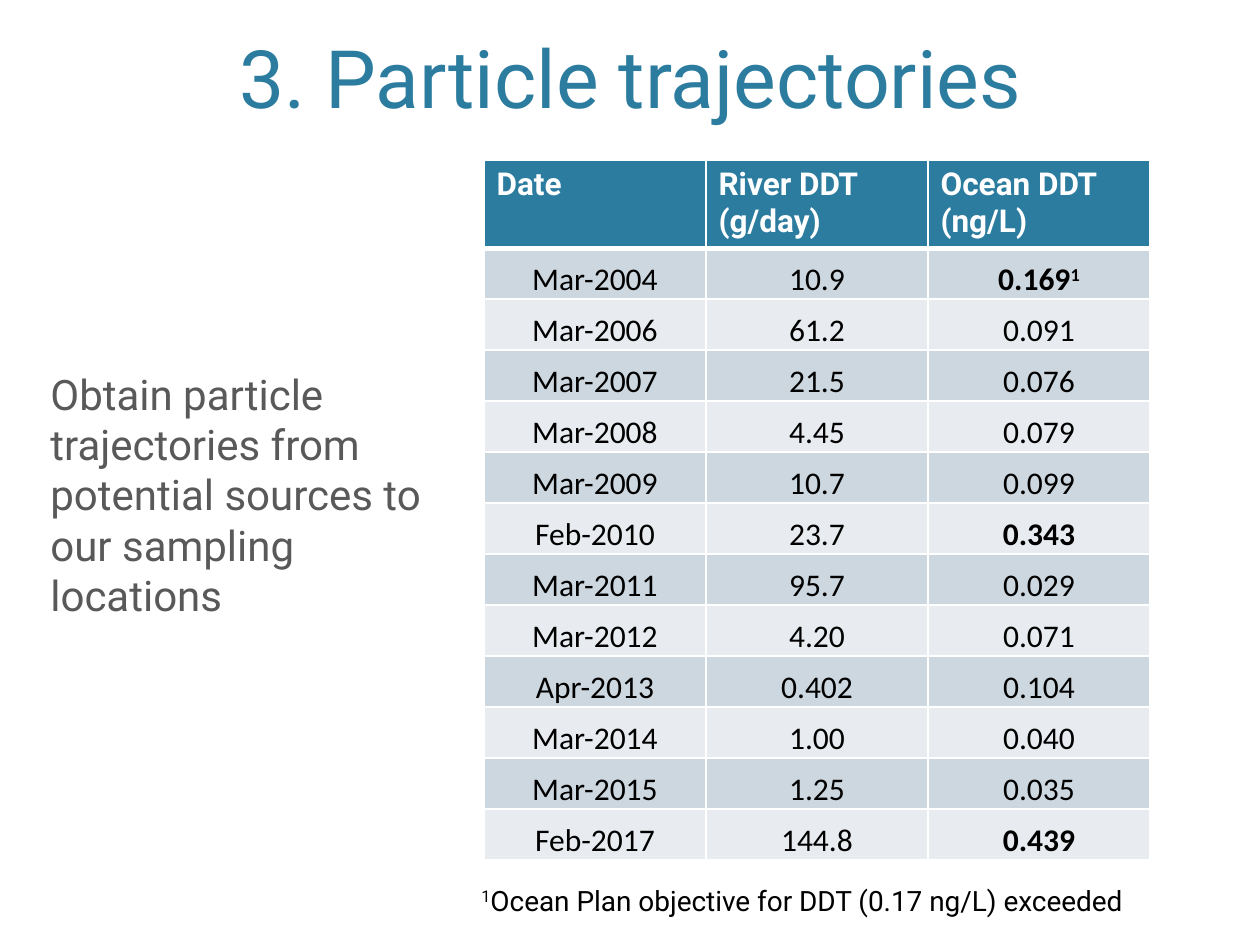
from lxml import etree
from pptx import Presentation
from pptx.dml.color import RGBColor
from pptx.enum.text import MSO_ANCHOR, PP_ALIGN
from pptx.oxml.ns import qn
from pptx.util import Emu, Pt

TOP, BOTTOM = MSO_ANCHOR.TOP, MSO_ANCHOR.BOTTOM
LEFT, CENTER = PP_ALIGN.LEFT, PP_ALIGN.CENTER
PX_PER_INCH = 126
COLORS = {"teal": "2C7C9F", "gray": "595959", "black": "000000",
          "white": "FFFFFF", "band": "CDD7DF", "light": "E8ECF0"}
HEADERS = ["Date", "River DDT (g/day)", "Ocean DDT (ng/L)"]
READINGS = [
    ("Mar-2004", "10.9", "0.169"), ("Mar-2006", "61.2", "0.091"),
    ("Mar-2007", "21.5", "0.076"), ("Mar-2008", "4.45", "0.079"),
    ("Mar-2009", "10.7", "0.099"), ("Feb-2010", "23.7", "0.343"),
    ("Mar-2011", "95.7", "0.029"), ("Mar-2012", "4.20", "0.071"),
    ("Apr-2013", "0.402", "0.104"), ("Mar-2014", "1.00", "0.040"),
    ("Mar-2015", "1.25", "0.035"), ("Feb-2017", "144.8", "0.439"),
]
HIGHLIGHTS = {"0.169", "0.343", "0.439"}
FOOTNOTES = {"0.169": "1"}


def px(n):
    return Emu(round(n * 914400 / PX_PER_INCH))


def rgb(name):
    return RGBColor.from_string(COLORS[name])


class SlideBuilder:
    def __init__(self, prs):
        self.font = "Roboto"
        self.s = prs.slides.add_slide(prs.slide_layouts[6])

    def add_runs(self, tf, runs, size, color, align=LEFT, font=None, bold=False):
        p = tf.paragraphs[0]
        p.alignment = align
        formats = {"size": Pt(size), "name": font or self.font, "bold": bold}
        for text, raised in runs:
            r = p.add_run()
            r.text = text
            for key, value in formats.items():
                setattr(r.font, key, value)
            r.font.color.rgb = rgb(color)
            if raised:
                r._r.get_or_add_rPr().set("baseline", "30000")
        return p

    def text(self, box, runs, size, color, align=LEFT, anchor=TOP, wrap=True):
        sp = self.s.shapes.add_textbox(*map(px, box))
        tf = sp.text_frame
        tf.word_wrap = wrap
        tf.vertical_anchor = anchor
        self.add_runs(tf, runs, size, color, align)

    def borders(self, cell, bottom):
        tcPr = cell._tc.get_or_add_tcPr()
        widths = {"a:lnL": 1, "a:lnR": 1, "a:lnT": 1, "a:lnB": bottom}
        for i, (tag, width) in enumerate(widths.items()):
            ln = etree.Element(qn(tag), w=str(int(Pt(width))))
            fill = etree.SubElement(ln, qn("a:solidFill"))
            etree.SubElement(fill, qn("a:srgbClr"), val=COLORS["white"])
            tcPr.insert(i, ln)

    def fill(self, cell, color, bottom=1):
        cell.fill.solid()
        cell.fill.fore_color.rgb = rgb(color)
        self.borders(cell, bottom)

    def header_cell(self, cell, text):
        self.fill(cell, "teal", 3)
        self.add_runs(cell.text_frame, [(text, False)], 18, "white", bold=True)

    def body_cell(self, cell, text, color):
        self.fill(cell, color)
        formats = {"vertical_anchor": BOTTOM, "margin_left": px(9),
                   "margin_right": px(9), "margin_top": 0, "margin_bottom": 0}
        for key, value in formats.items():
            setattr(cell, key, value)
        runs = [(text, False)]
        if text in FOOTNOTES:
            runs.append((FOOTNOTES[text], True))
        p = self.add_runs(cell.text_frame, runs, 18, "black", CENTER, "Calibri",
                          text in HIGHLIGHTS)
        p.space_after = Pt(2)

    def table(self, left, top, col_width, header_height, row_height):
        cols, rows = len(HEADERS), len(READINGS) + 1
        height = header_height + row_height * len(READINGS)
        table = self.s.shapes.add_table(
            rows, cols, *map(px, (left, top, cols * col_width, height))).table
        for col in table.columns:
            col.width = px(col_width)
        for i, row in enumerate(table.rows):
            row.height = px(row_height if i else header_height)
        for j, text in enumerate(HEADERS):
            self.header_cell(table.cell(0, j), text)
        for i, reading in enumerate(READINGS, 1):
            for j, text in enumerate(reading):
                self.body_cell(table.cell(i, j), text, "band" if i % 2 else "light")


def main():
    prs = Presentation()
    prs.slide_width, prs.slide_height = px(1260), px(945)
    slide = SlideBuilder(prs)
    slide.text((76, 19, 1108, 112), [("3. Particle trajectories", False)],
               46, "teal", CENTER, BOTTOM)
    slide.table(484, 160, 222, 86, 51)
    slide.text((469, 877, 726, 47),
               [("1", True), ("Ocean Plan objective for DDT (0.17 ng/L) exceeded", False)],
               16, "black", wrap=False)
    slide.text((38, 362, 432, 598),
               [("Obtain particle trajectories from potential sources to our sampling locations",
                 False)], 24, "gray")
    prs.save("out.pptx")


if __name__ == "__main__":
    main()
